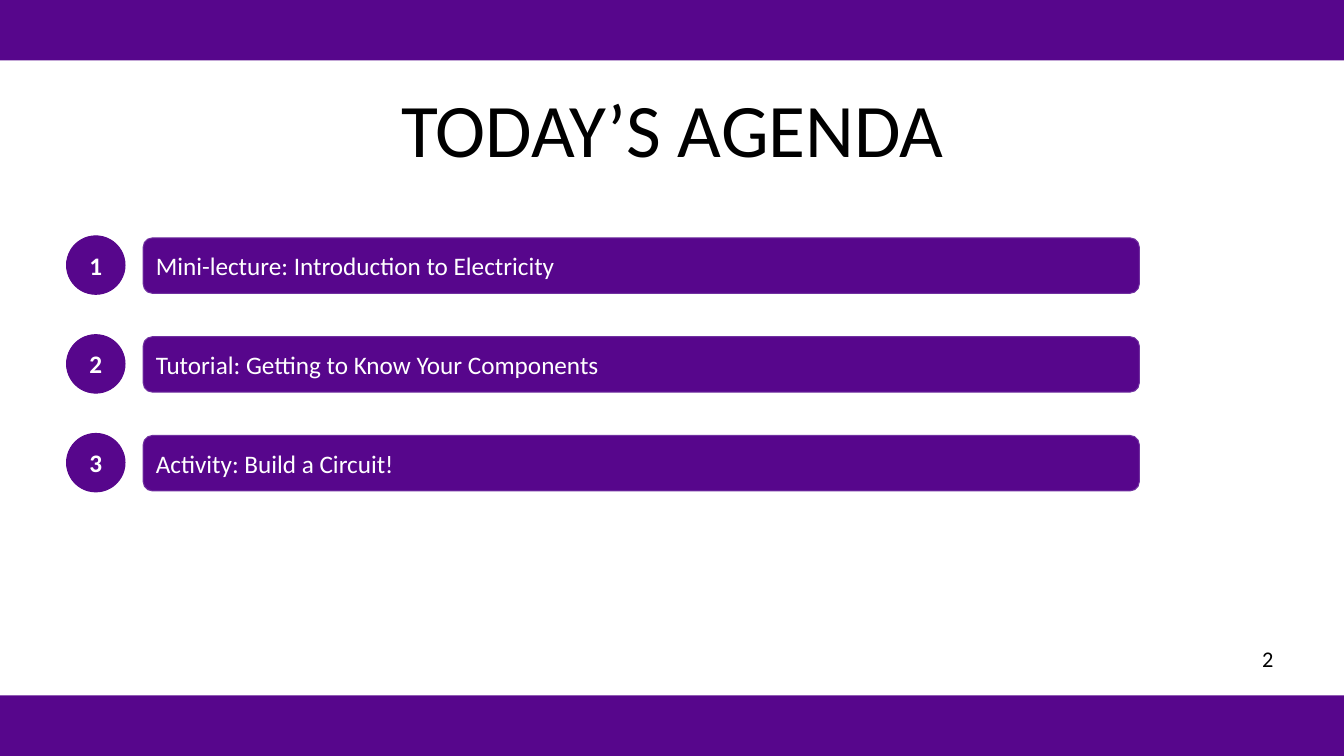
from pptx import Presentation
from pptx import util as u
from pptx.dml.color import RGBColor
from pptx.enum import shapes, text

COLORS = {"violet": "57068C", "edge": "7030A0", "white": "FFFFFF", "black": "000000"}
KINDS = shapes.MSO_SHAPE
ALIGN = text.PP_ALIGN
WIDTH, HEIGHT = 13.33, 7.5


def rgb(name):
    return RGBColor.from_string(COLORS[name])


class AgendaSlide:
    """Holds the style and the current slide."""

    font = "Calibri"

    def __init__(self, prs):
        self.s = prs.slides.add_slide(prs.slide_layouts[6])

    def set_text(self, sp, words, size, color, align=ALIGN.LEFT, bold=False,
                 inset=0.05, spacing=None, wrap=True):
        tf = sp.text_frame
        frame = {"word_wrap": wrap, "vertical_anchor": text.MSO_ANCHOR.MIDDLE,
                 "margin_left": u.Inches(0.1), "margin_right": u.Inches(0.1),
                 "margin_top": u.Inches(inset), "margin_bottom": u.Inches(inset)}
        for key, value in frame.items():
            setattr(tf, key, value)
        p = tf.paragraphs[0]
        p.alignment = align
        p.line_spacing = spacing
        r = p.add_run()
        r.text = words
        for key, value in {"name": self.font, "size": u.Pt(size), "bold": bold}.items():
            setattr(r.font, key, value)
        r.font.color.rgb = rgb(color)

    def shape(self, kind, box, line=None, parent=None):
        sp = (parent or self.s).shapes.add_shape(kind, *map(u.Inches, box))
        sp.shadow.inherit = False
        sp.fill.solid()
        sp.fill.fore_color.rgb = rgb("violet")
        if line:
            sp.line.color.rgb = rgb(line)
            sp.line.width = u.Pt(0.75)
        else:
            sp.line.fill.background()
        return sp

    def label(self, words, box, size, **style):
        sp = self.s.shapes.add_textbox(*map(u.Inches, box))
        self.set_text(sp, words, size, "black", **style)

    def agenda_item(self, number, topic, top):
        group = self.s.shapes.add_group_shape()
        badge = self.shape(KINDS.OVAL, (0.66, top, 0.58, 0.58), "violet", group)
        self.set_text(badge, str(number), 18, "white", ALIGN.CENTER, bold=True, inset=0.1)
        bar = self.shape(KINDS.ROUNDED_RECTANGLE, (1.42, top + 0.02, 9.88, 0.55), "edge", group)
        bar.adjustments[0] = 0.167
        self.set_text(bar, topic, 18, "white", inset=0.1)


def main():
    prs = Presentation()
    prs.slide_width, prs.slide_height = u.Inches(WIDTH), u.Inches(HEIGHT)
    slide = AgendaSlide(prs)

    # Top and bottom bands
    band = 0.6
    for top in (0, HEIGHT - band):
        slide.shape(KINDS.RECTANGLE, (0, top, WIDTH, band))

    # Page number and title
    slide.label("2", (12.42, 6.35, 0.51, 0.37), 16)
    slide.label("TODAY’S AGENDA", (0.92, 0.59, 11.5, 1.45), 54,
                align=ALIGN.CENTER, spacing=0.9)

    # Agenda items
    topics = ["Mini-lecture: Introduction to Electricity",
              "Tutorial: Getting to Know Your Components",
              "Activity: Build a Circuit!"]
    for i, topic in enumerate(topics):
        slide.agenda_item(i + 1, topic, 2.34 + 0.98 * i)

    prs.save("out.pptx")


if __name__ == "__main__":
    main()
